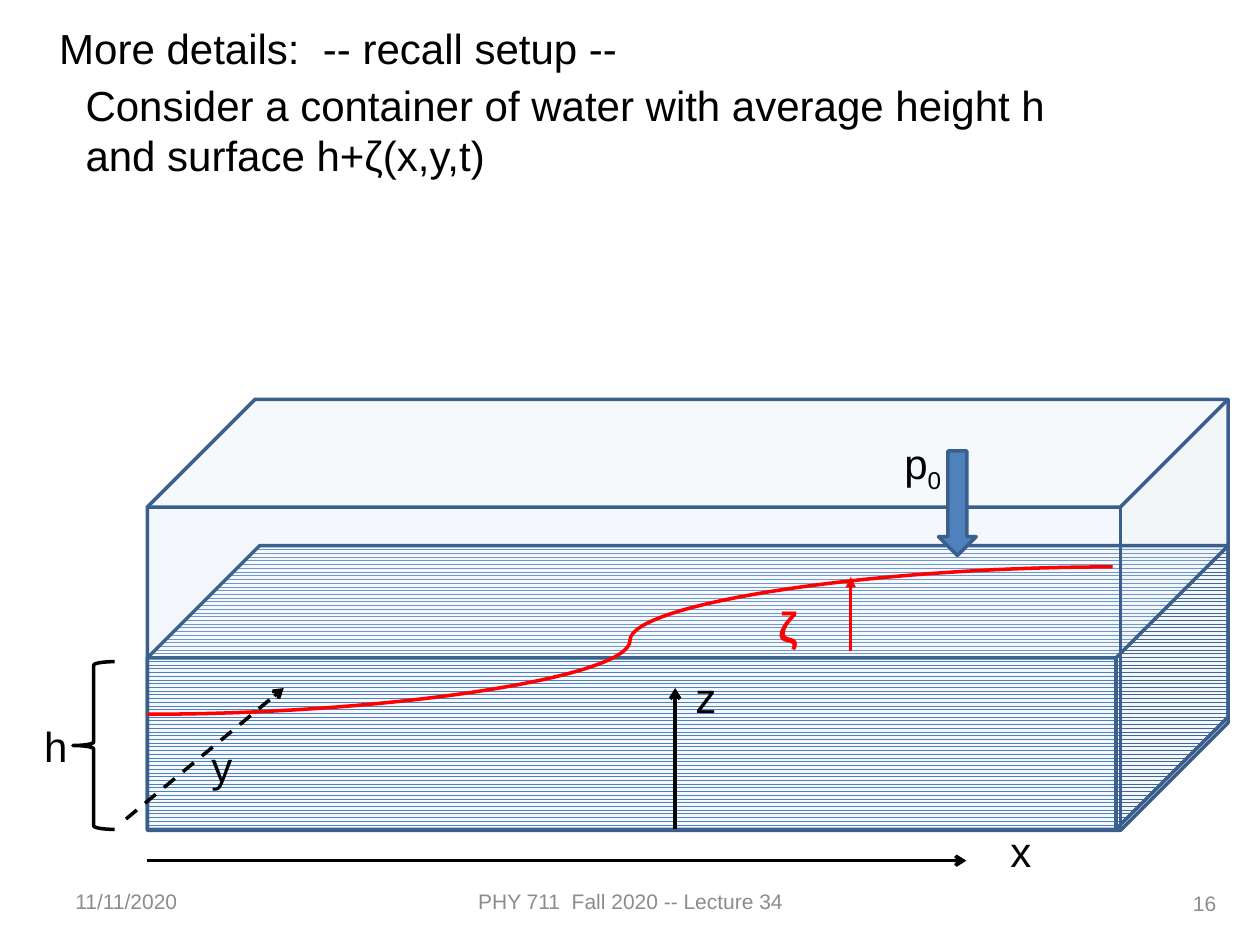
import pptx
import pptx.util
import pptx.dml.color
import pptx.enum.dml
import pptx.enum.shapes
import pptx.enum.text
import pptx.oxml
import pptx.oxml.ns

Cm, Pt = pptx.util.Cm, pptx.util.Pt
RGBColor = pptx.dml.color.RGBColor
Shape = pptx.enum.shapes.MSO_SHAPE
Link = pptx.enum.shapes.MSO_CONNECTOR
Align = pptx.enum.text.PP_ALIGN
Anchor = pptx.enum.text.MSO_ANCHOR

BLACK = RGBColor(0x00, 0x00, 0x00)
WHITE = RGBColor(0xFF, 0xFF, 0xFF)
GRAY = RGBColor(0x8C, 0x8C, 0x8C)
RED = RGBColor(0xFF, 0x00, 0x00)
BLUE = RGBColor(0x4F, 0x81, 0xBD)
EDGE = RGBColor(0x3A, 0x5F, 0x8C)

# Content: text and places, lengths in cm
TITLE = ("More details:  -- recall setup --", (0.94, 0.33, 19.25, 1.27))
BODY = ("Consider a container of water with average height h "
        "and surface h+ζ(x,y,t)", (1.47, 1.47, 20.96, 2.31))
FOOT = [
    ("11/11/2020", (1.27, 17.65, 5.92, 1.02), Align.LEFT),
    ("PHY 711  Fall 2020 -- Lecture 34", (8.69, 17.65, 8.05, 1.02), Align.CENTER),
    ("16", (18.85, 17.7, 5.92, 1.02), Align.RIGHT),
]
# name, subscript, left, top, width, colour, bold
LABELS = [
    ("p", "0", 17.98, 8.69, 4.45, BLACK, False),
    ("h", "", 0.64, 14.4, 1.9, BLACK, False),
    ("z", "", 13.77, 13.41, 1.7, BLACK, False),
    ("x", "", 20.12, 16.51, 1.7, BLACK, False),
    ("ζ", "", 15.44, 11.99, 1.27, RED, True),
    ("y", "", 4.01, 14.81, 1.7, BLACK, False),
]
WATER = (2.97, 11, 21.79, 5.72)
TANK = (2.97, 8.05, 21.79, 8.69)
PRESS = (18.92, 9.09, 0.76, 2.11)
BRACE = (1.47, 13.34, 0.84, 3.38)
# kind, start and end, colour, arrowhead, dashed
LINES = [
    (Link.STRAIGHT, (13.61, 16.72, 13.61, 13.87), BLACK, "arrow", False),
    (Link.STRAIGHT, (2.97, 17.35, 19.48, 17.35), BLACK, "arrow", False),
    (Link.CURVE, (2.97, 14.4, 22.43, 11.43), RED, None, False),
    (Link.STRAIGHT, (17.15, 13.13, 17.15, 11.63), RED, "triangle", False),
    (Link.STRAIGHT, (2.54, 16.51, 5.72, 13.87), BLACK, "arrow", True),
]


def cms(place):
    return [Cm(v) for v in place]


def add_node(parent, tag, **attrs):
    node = pptx.oxml.parse_xml(f"<{tag} {pptx.oxml.ns.nsdecls('a')}/>")
    for key, val in attrs.items():
        node.set(key, val)
    parent.append(node)
    return node


def add_run(para, text, size=24, color=BLACK, bold=False):
    run = para.add_run()
    run.text = text
    font = run.font
    font.name, font.size, font.bold = "Arial", Pt(size), bold
    font.color.rgb = color
    return run


def set_frame(box, align=Align.LEFT, anchor=Anchor.TOP):
    frame = box.text_frame
    frame.word_wrap = True
    frame.auto_size = pptx.enum.text.MSO_AUTO_SIZE.NONE
    frame.vertical_anchor = anchor
    para = frame.paragraphs[0]
    para.alignment = align
    para.space_before = Pt(0)
    return para


def fill_holder(holder, text, place):
    holder.left, holder.top, holder.width, holder.height = cms(place)
    para = set_frame(holder)
    add_run(para, text)
    return para


def add_solid(slide, kind, place, color=EDGE):
    shape = slide.shapes.add_shape(kind, *cms(place))
    shape.shadow.inherit = False
    shape.line.color.rgb = color
    shape.line.width = Pt(2)
    return shape


def add_line(slide, kind, ends, color, head, dashed):
    link = slide.shapes.add_connector(kind, *cms(ends))
    link.line.color.rgb = color
    link.line.width = Pt(2)
    if dashed:
        link.line.dash_style = pptx.enum.dml.MSO_LINE.DASH
    if head:
        add_node(link.line._get_or_add_ln(), "a:tailEnd", type=head)
    add_node(link._element.spPr, "a:effectLst")


def main():
    deck = pptx.Presentation()
    deck.slide_width, deck.slide_height = Cm(25.4), Cm(19.05)
    slide = deck.slides.add_slide(deck.slide_layouts[1])

    # Title and body
    fill_holder(slide.shapes.title, *TITLE)
    para = fill_holder(slide.placeholders[1], *BODY)
    props = para._p.get_or_add_pPr()
    props.set("marL", "0")
    props.set("indent", "0")
    add_node(props, "a:buNone")

    # Footer
    for text, place, align in FOOT:
        box = slide.shapes.add_textbox(*cms(place))
        add_run(set_frame(box, align, Anchor.MIDDLE), text, 12, GRAY)

    # Water in the tank
    water = add_solid(slide, Shape.CUBE, WATER)
    water.adjustments[0] = 0.396
    water.fill.patterned()
    water.fill.pattern = pptx.enum.dml.MSO_PATTERN.ZIG_ZAG
    water.fill.fore_color.rgb = BLUE
    water.fill.back_color.rgb = WHITE

    tank = add_solid(slide, Shape.CUBE, TANK)
    tank.fill.solid()
    tank.fill.fore_color.rgb = BLUE
    tint = tank._element.spPr.find(
        pptx.oxml.ns.qn("a:solidFill") + "/" + pptx.oxml.ns.qn("a:srgbClr"))
    add_node(tint, "a:alpha", val="6000")

    # Pressure arrow and height brace
    press = add_solid(slide, Shape.DOWN_ARROW, PRESS)
    press.fill.solid()
    press.fill.fore_color.rgb = BLUE
    add_solid(slide, Shape.LEFT_BRACE, BRACE, BLACK).fill.background()

    # Axes, wave and labels
    for item in LINES:
        add_line(slide, *item)
    for name, sub, left, top, width, color, bold in LABELS:
        box = slide.shapes.add_textbox(*cms((left, top, width, 1.27)))
        para = set_frame(box)
        add_run(para, name, 24, color, bold)
        if sub:
            run = add_run(para, sub, 24, color, bold)
            run.font._element.set("baseline", "-25000")

    deck.save("out.pptx")


if __name__ == "__main__":
    main()
